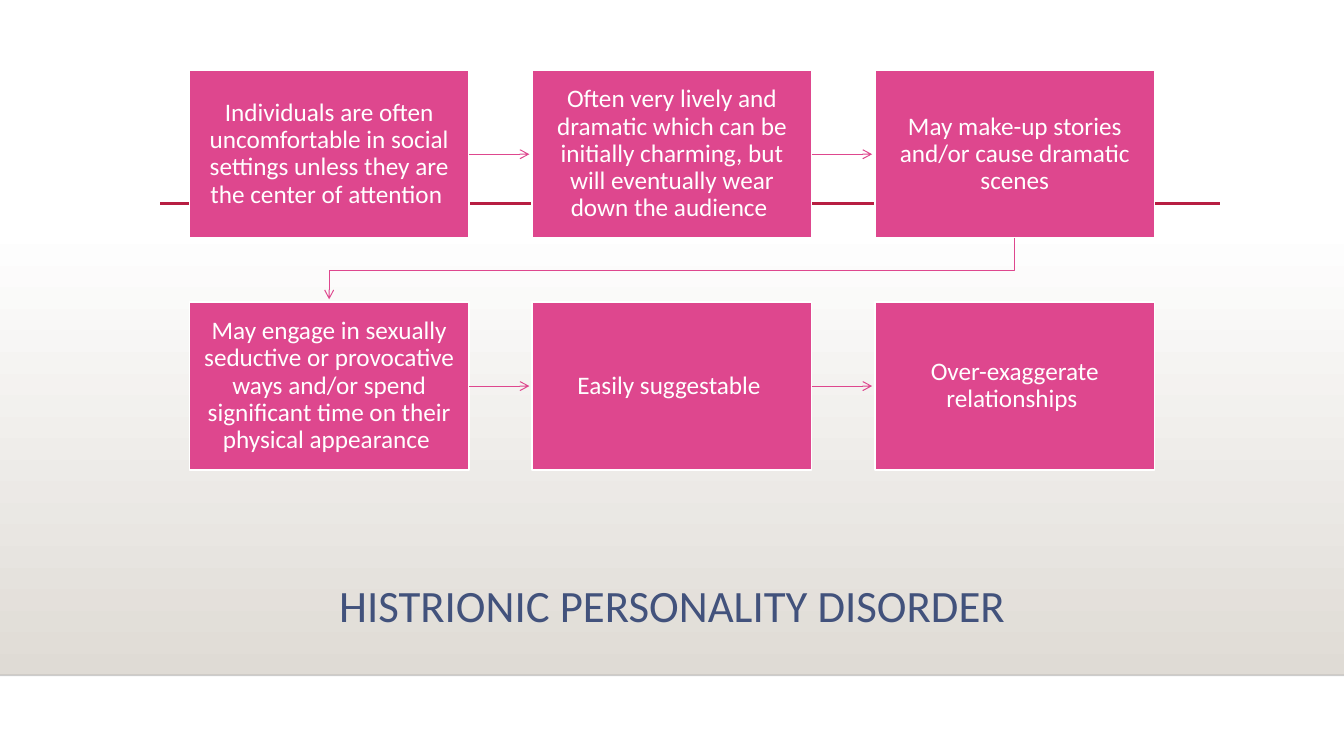
"""Build the slide on histrionic personality disorder with its six-step flow."""
import pptx
import pptx.util
import pptx.dml.color
import pptx.enum.shapes
import pptx.enum.text
import pptx.oxml
import pptx.oxml.ns
from pptx.util import Inches

WHITE = pptx.dml.color.RGBColor(0xFF, 0xFF, 0xFF)
BLACK = pptx.dml.color.RGBColor(0x00, 0x00, 0x01)
SAND = pptx.dml.color.RGBColor(0xDF, 0xDB, 0xD5)
RED = pptx.dml.color.RGBColor(0xB7, 0x1E, 0x42)
PINK = pptx.dml.color.RGBColor(0xDE, 0x47, 0x8E)
NAVY = pptx.dml.color.RGBColor(0x42, 0x52, 0x7C)


def write_text(shape, text, size, color, anchor, margin_x, margin_y):
    frame = shape.text_frame
    frame.word_wrap = True
    frame.vertical_anchor = anchor
    frame.margin_left = frame.margin_right = Inches(margin_x)
    frame.margin_top = frame.margin_bottom = Inches(margin_y)
    para = frame.paragraphs[0]
    para.alignment = pptx.enum.text.PP_ALIGN.CENTER
    para.line_spacing = 0.9
    span = para.add_run()
    span.text = text
    span.font.name = "Calibri"
    span.font.size = pptx.util.Pt(size)
    span.font.color.rgb = color


def style_line(shape, color, width, arrow=False):
    shape.line.color.rgb = color
    shape.line.width = pptx.util.Pt(width)
    if arrow:
        head = pptx.oxml.parse_xml(f'<a:tailEnd {pptx.oxml.ns.nsdecls("a")} type="arrow"/>')
        shape.line._get_or_add_ln().append(head)
    if shape._element.spPr.find(pptx.oxml.ns.qn("a:effectLst")) is None:
        shape._element.spPr.append(
            pptx.oxml.parse_xml(f'<a:effectLst {pptx.oxml.ns.nsdecls("a")}/>'))


deck = pptx.Presentation()
deck.slide_width = Inches(13.33)
deck.slide_height = Inches(7.5)
page = deck.slides.add_slide(deck.slide_layouts[6])
shapes = page.shapes
RECTANGLE = pptx.enum.shapes.MSO_SHAPE.RECTANGLE
STRAIGHT = pptx.enum.shapes.MSO_CONNECTOR.STRAIGHT

backdrop = shapes.add_shape(RECTANGLE, 0, Inches(2.21), Inches(13.33), Inches(4.49))
backdrop.shadow.inherit = False
backdrop.line.fill.background()
backdrop.fill.gradient()
backdrop.fill.gradient_angle = 270
for stop, color, position in zip(backdrop.fill.gradient_stops, (WHITE, SAND), (0, 1)):
    stop.color.rgb = color
    stop.position = position

floor_line = shapes.add_connector(STRAIGHT, 0, Inches(6.7), Inches(13.33), Inches(6.7))
style_line(floor_line, BLACK, 1)
floor_color = floor_line.line._get_or_add_ln().find(".//" + pptx.oxml.ns.qn("a:srgbClr"))
floor_color.append(
    pptx.oxml.parse_xml(f'<a:alpha {pptx.oxml.ns.nsdecls("a")} val="20000"/>'))

red_line = shapes.add_connector(STRAIGHT, Inches(1.59), Inches(2.02), Inches(12.1), Inches(2.02))
style_line(red_line, RED, 2.5)

title = shapes.add_textbox(Inches(1.17), Inches(5.74), Inches(11), Inches(1.13))
write_text(title, "HISTRIONIC PERSONALITY DISORDER", size=32, color=NAVY,
           anchor=pptx.enum.text.MSO_ANCHOR.TOP, margin_x=0.1, margin_y=0.05)

traits = [
    "Individuals are often uncomfortable in social settings unless they are the center of attention ",
    "Often very lively and dramatic which can be initially charming, but will eventually wear down the audience ",
    "May make-up stories and/or cause dramatic scenes",
    "May engage in sexually seductive or provocative ways and/or spend significant time on their physical appearance ",
    "Easily suggestable ",
    "Over-exaggerate relationships ",
]
LEFT, TOP, WIDTH, HEIGHT = 1.88, 0.7, 2.77, 1.66
COLUMN_STEP, ROW_STEP, ARROW_LENGTH = 3.4, 2.3, 0.6

for index, trait in enumerate(traits):
    row, column = divmod(index, 3)
    left = LEFT + column * COLUMN_STEP
    top = TOP + row * ROW_STEP
    box = shapes.add_shape(RECTANGLE, Inches(left), Inches(top), Inches(WIDTH), Inches(HEIGHT))
    box.shadow.inherit = False
    box.fill.solid()
    box.fill.fore_color.rgb = PINK
    style_line(box, WHITE, 1.25)
    write_text(box, trait, size=18, color=WHITE,
               anchor=pptx.enum.text.MSO_ANCHOR.MIDDLE, margin_x=0.14, margin_y=0.14)
    if column < 2:
        right, middle = left + WIDTH, top + HEIGHT / 2
        arrow = shapes.add_connector(STRAIGHT, Inches(right), Inches(middle),
                                     Inches(right + ARROW_LENGTH), Inches(middle))
        arrow.begin_connect(box, 3)
        style_line(arrow, PINK, 0.75, arrow=True)

first_center = LEFT + WIDTH / 2
last_center = first_center + 2 * COLUMN_STEP
row_bottom = TOP + HEIGHT
turn = row_bottom + 0.32
builder = shapes.build_freeform(Inches(last_center), Inches(row_bottom))
builder.add_line_segments(
    [(Inches(x), Inches(y)) for x, y in
     ((last_center, turn), (first_center, turn), (first_center, 2.97))], close=False)
row_arrow = builder.convert_to_shape()
row_arrow.shadow.inherit = False
row_arrow.fill.background()
style_line(row_arrow, PINK, 0.75, arrow=True)

deck.save("out.pptx")
